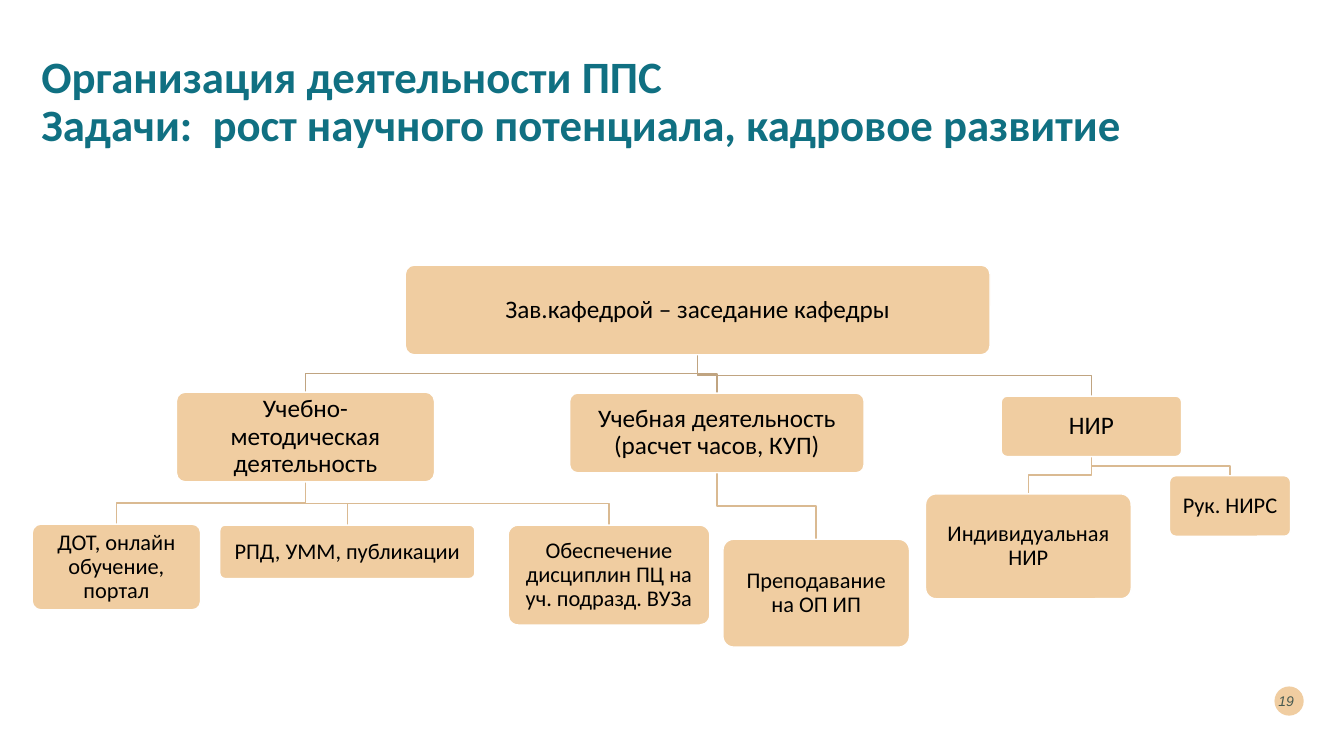
from dataclasses import dataclass

import pptx
import pptx.dml.color
import pptx.enum.shapes
import pptx.enum.text
import pptx.oxml
import pptx.oxml.ns
import pptx.util

EMU_PER_PX = 9144  # 100 px to the inch
MSO = pptx.enum.shapes.MSO_SHAPE
ALIGN = pptx.enum.text.PP_ALIGN
MIDDLE = pptx.enum.text.MSO_ANCHOR.MIDDLE


@dataclass(frozen=True)
class Theme:
    font: str = "Calibri"
    number_font: str = "Arial"
    title: str = "107082"
    box: str = "F0CDA1"
    border: str = "FFFFFF"
    text: str = "000000"
    number: str = "00292E"
    links: tuple = ("C0A481", "DABA92")
    title_size: int = 32
    box_sizes: tuple = (18, 18, 16)
    number_size: int = 10


def px(n):
    return pptx.util.Emu(round(n * EMU_PER_PX))


def rgb(color):
    return pptx.dml.color.RGBColor.from_string(color)


class Deck:
    def __init__(self, theme):
        self.theme = theme
        self.prs = pptx.Presentation()
        self.prs.slide_width, self.prs.slide_height = px(1333), px(750)
        self.slide = self.prs.slides.add_slide(self.prs.slide_layouts[5])

    def set_text(self, sp, text, align, color, spacing=0.9, inset=10, **font):
        tf = sp.text_frame
        frame = {"text": text, "word_wrap": True, "vertical_anchor": MIDDLE,
                 "auto_size": pptx.enum.text.MSO_AUTO_SIZE.NONE,
                 "margin_left": px(inset), "margin_right": px(inset)}
        for name, value in frame.items():
            setattr(tf, name, value)
        for p in tf.paragraphs:
            p.alignment, p.line_spacing = align, spacing
            for r in p.runs:
                for name, value in font.items():
                    setattr(r.font, name, value)
                r.font.color.rgb = rgb(color)

    def title(self, text, box):
        sp = self.slide.shapes.title
        sp.left, sp.top, sp.width, sp.height = map(px, box)
        self.set_text(sp, text, ALIGN.LEFT, self.theme.title, bold=True,
                      name=self.theme.font,
                      size=pptx.util.Pt(self.theme.title_size))

    def shape(self, kind, box):
        sp = self.slide.shapes.add_shape(kind, *map(px, box))
        sp.shadow.inherit = False
        sp.fill.solid()
        sp.fill.fore_color.rgb = rgb(self.theme.box)
        return sp

    def number(self, text, circle, box):
        self.shape(MSO.OVAL, circle).line.fill.background()
        sp = self.slide.shapes.add_textbox(*map(px, box))
        self.set_text(sp, text, ALIGN.RIGHT, self.theme.number, spacing=1.0,
                      name=self.theme.number_font, italic=True,
                      size=pptx.util.Pt(self.theme.number_size))
        clr = sp.element.find(".//" + pptx.oxml.ns.qn("a:srgbClr"))
        ns = pptx.oxml.ns.nsdecls("a")
        clr.append(pptx.oxml.parse_xml(f'<a:alpha {ns} val="70000"/>'))

    def node(self, text, box, level):
        sp = self.shape(MSO.ROUNDED_RECTANGLE, box)
        sp.adjustments[0] = 0.1
        sp.line.color.rgb = rgb(self.theme.border)
        sp.line.width = pptx.util.Pt(1)
        self.set_text(sp, text, ALIGN.CENTER, self.theme.text, inset=9,
                      name=self.theme.font,
                      size=pptx.util.Pt(self.theme.box_sizes[level]))

    def link(self, parent, child, level):
        """Draw a bent line from the parent's bottom to the child's top."""
        x1, y1 = parent[0] + parent[2] / 2, parent[1] + parent[3]
        x2, y2 = child[0] + child[2] / 2, child[1]
        bend = (y1 + y2) / 2
        fb = self.slide.shapes.build_freeform(px(x1), px(y1))
        fb.add_line_segments([(px(x), px(y)) for x, y in
                              ((x1, bend), (x2, bend), (x2, y2))], close=False)
        sp = fb.convert_to_shape()
        sp.shadow.inherit = False
        sp.fill.background()
        sp.line.color.rgb = rgb(self.theme.links[level])
        sp.line.width = pptx.util.Pt(1)

    def tree(self, branch, level=0):
        text, box, children = branch
        for child in children:
            self.link(box, child[1], level)
            self.tree(child, level + 1)
        self.node(text, box, level)


DEPARTMENT = ("Зав.кафедрой – заседание кафедры", (402, 263, 580, 89), [
    ("Учебно-методическая деятельность", (175, 389, 256, 89), [
        ("ДОТ, онлайн обучение, портал", (32, 520, 167, 85), []),
        ("РПД, УММ, публикации", (218, 521, 253, 53), []),
        ("Обеспечение дисциплин ПЦ на уч. подразд. ВУЗа", (504, 521, 200, 99), []),
    ]),
    ("Учебная деятельность (расчет часов, КУП)", (565, 390, 292, 79), [
        ("Преподавание на ОП ИП", (717, 535, 185, 107), []),
    ]),
    ("НИР", (993, 393, 179, 60), [
        ("Индивидуальная НИР", (918, 490, 204, 104), []),
        ("Рук. НИРС", (1160, 472, 120, 60), []),
    ]),
])


def main():
    deck = Deck(Theme())
    deck.title("Организация деятельности ППС\v"
               "Задачи:  рост научного потенциала, кадровое развитие",
               (31, 40, 1249, 124))
    deck.tree(DEPARTMENT)
    deck.number("19", (1264, 681, 29, 29), (1254, 675, 39, 40))
    deck.prs.save("out.pptx")


if __name__ == "__main__":
    main()
